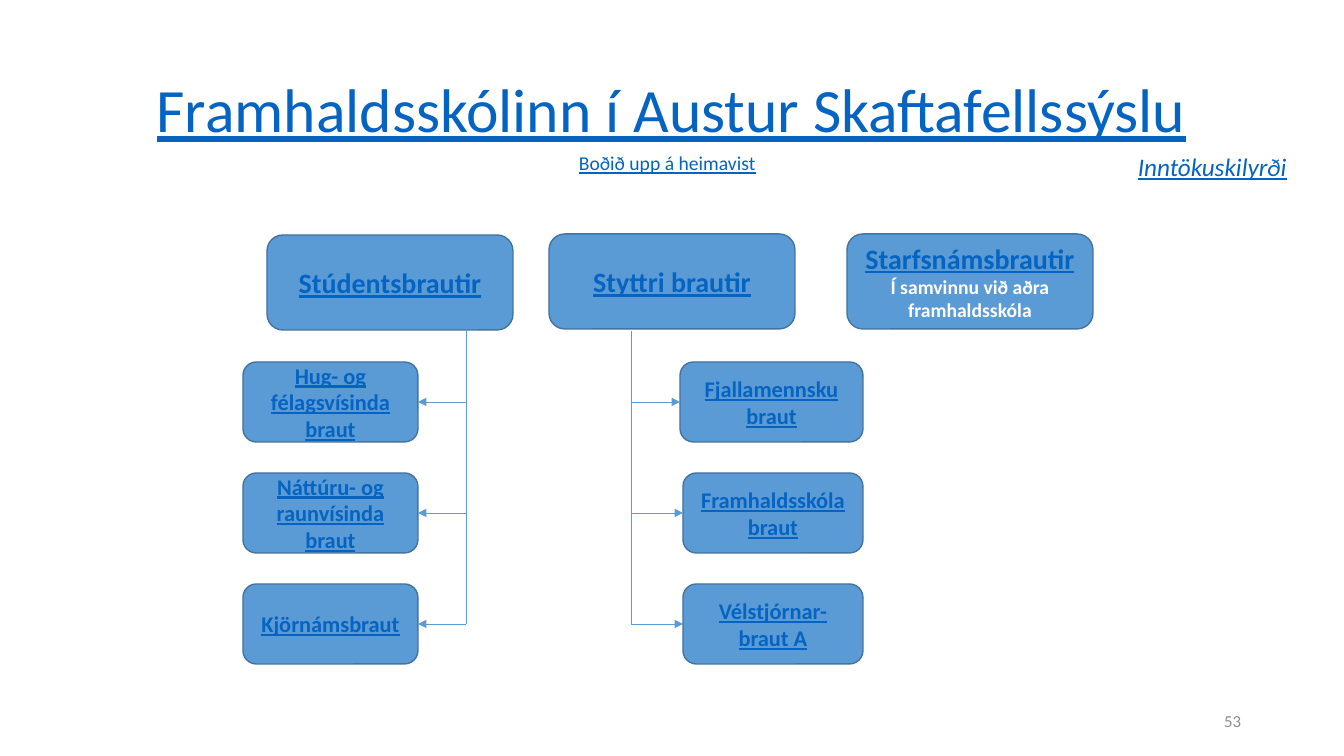
from dataclasses import dataclass

from lxml import etree
from pptx import Presentation
from pptx import util as u
from pptx.dml.color import RGBColor
from pptx.enum import shapes, text
from pptx.oxml.ns import qn

PX = 12192000 / 1344
TOP, LEFT, BOTTOM, RIGHT = range(4)


@dataclass(frozen=True)
class Theme:
    font: str = "Calibri"
    link: str = "0563C1"
    white: str = "FFFFFF"
    grey: str = "8C8C8C"
    fill: str = "5B9BD5"
    border: str = "43739E"
    title: int = 44
    heading: int = 20
    admission: int = 18
    branch: int = 16
    note: int = 14
    number: int = 12


THEME = Theme()


def px(length):
    return u.Emu(round(length * PX))


def color(value):
    return RGBColor.from_string(value)


def write(frame, words, size, ink=THEME.link, bold=False, italic=False,
          underline=True, align=text.PP_ALIGN.LEFT, spacing=None, add=False):
    """Write one paragraph, either the first one or an added one."""
    para = frame.add_paragraph() if add else frame.paragraphs[0]
    para.alignment = align
    if spacing:
        para.line_spacing = spacing
    span = para.add_run()
    span.text = words
    font = span.font
    font.name, font.size, font.color.rgb = THEME.font, u.Pt(size), color(ink)
    font.bold, font.italic, font.underline = bold, italic, underline


def label(page, words, place, size, middle=False, **style):
    frame = page.shapes.add_textbox(*map(px, place)).text_frame
    frame.word_wrap = True
    if middle:
        frame.vertical_anchor = text.MSO_ANCHOR.MIDDLE
    write(frame, words, size, **style)


def rounded_box(page, lines, place, size):
    box = page.shapes.add_shape(shapes.MSO_SHAPE.ROUNDED_RECTANGLE, *map(px, place))
    box.shadow.inherit = False
    box.fill.solid()
    box.fill.fore_color.rgb = color(THEME.fill)
    box.line.color.rgb = color(THEME.border)
    box.line.width = u.Pt(1)
    frame = box.text_frame
    frame.word_wrap = True
    frame.vertical_anchor = text.MSO_ANCHOR.MIDDLE
    for index, words in enumerate(lines):
        write(frame, words, size, bold=True, align=text.PP_ALIGN.CENTER, add=index > 0)
    return box


def thin_line(page, start, end, target=None, side=None):
    """Draw a plain line, or an arrow joined to a side of the target."""
    line = page.shapes.add_connector(
        shapes.MSO_CONNECTOR.STRAIGHT, *map(px, (*start, *end)))
    line.line.color.rgb = color(THEME.fill)
    line.line.width = u.Pt(0.5)
    if target is not None:
        line.end_connect(target, side)
        outline = line.line._get_or_add_ln()
        etree.SubElement(outline, qn("a:tailEnd"), type="triangle")
    etree.SubElement(line._element.spPr, qn("a:effectLst"))


def branch_tree(page, trunk, side, branches):
    """Draw the boxes of one column, their arrows and the trunk."""
    first, step, height = 362, 111, 80
    for row, (lines, left, width) in enumerate(branches):
        top = first + row * step
        middle = top + height // 2
        box = rounded_box(page, lines, (left, top, width, height), THEME.branch)
        edge = left + width if side == RIGHT else left
        thin_line(page, (trunk, middle), (edge, middle), box, side)
    thin_line(page, (trunk, 331), (trunk, middle))


def main():
    deck = Presentation()
    deck.slide_width, deck.slide_height = px(1344), px(756)
    page = deck.slides.add_slide(deck.slide_layouts[6])

    # Title, side notes and slide number
    label(page, "Framhaldsskólinn í Austur Skaftafellssýslu", (92, 40, 1159, 146),
          THEME.title, middle=True, align=text.PP_ALIGN.CENTER, spacing=0.9)
    label(page, "Boðið upp á heimavist", (569, 146, 203, 34), THEME.note)
    label(page, "Inntökuskilyrði", (1128, 146, 199, 40), THEME.admission, italic=True)
    label(page, "53", (949, 701, 302, 40), THEME.number, middle=True,
          ink=THEME.grey, underline=False, align=text.PP_ALIGN.RIGHT)

    # Headings
    headings = [("Stúdentsbrautir", 267, 235), ("Styttri brautir", 549, 234),
                ("Starfsnámsbrautir", 847, 234)]
    for words, left, top in headings:
        box = rounded_box(page, [words], (left, top, 246, 95), THEME.heading)
    write(box.text_frame, "Í samvinnu við aðra framhaldsskóla", THEME.note,
          ink=THEME.white, bold=True, underline=False,
          align=text.PP_ALIGN.CENTER, add=True)

    # Branches under the first two headings
    branch_tree(page, 466, RIGHT, [
        (["Hug- og félagsvísinda braut"], 243, 175),
        (["Náttúru- og raunvísinda braut"], 243, 175),
        (["Kjörnámsbraut"], 243, 175)])
    branch_tree(page, 631, LEFT, [
        (["Fjallamennsku", "braut"], 680, 183),
        (["Framhaldsskólabraut"], 683, 180),
        (["Vélstjórnar- braut A"], 683, 180)])

    deck.save("out.pptx")


if __name__ == "__main__":
    main()
